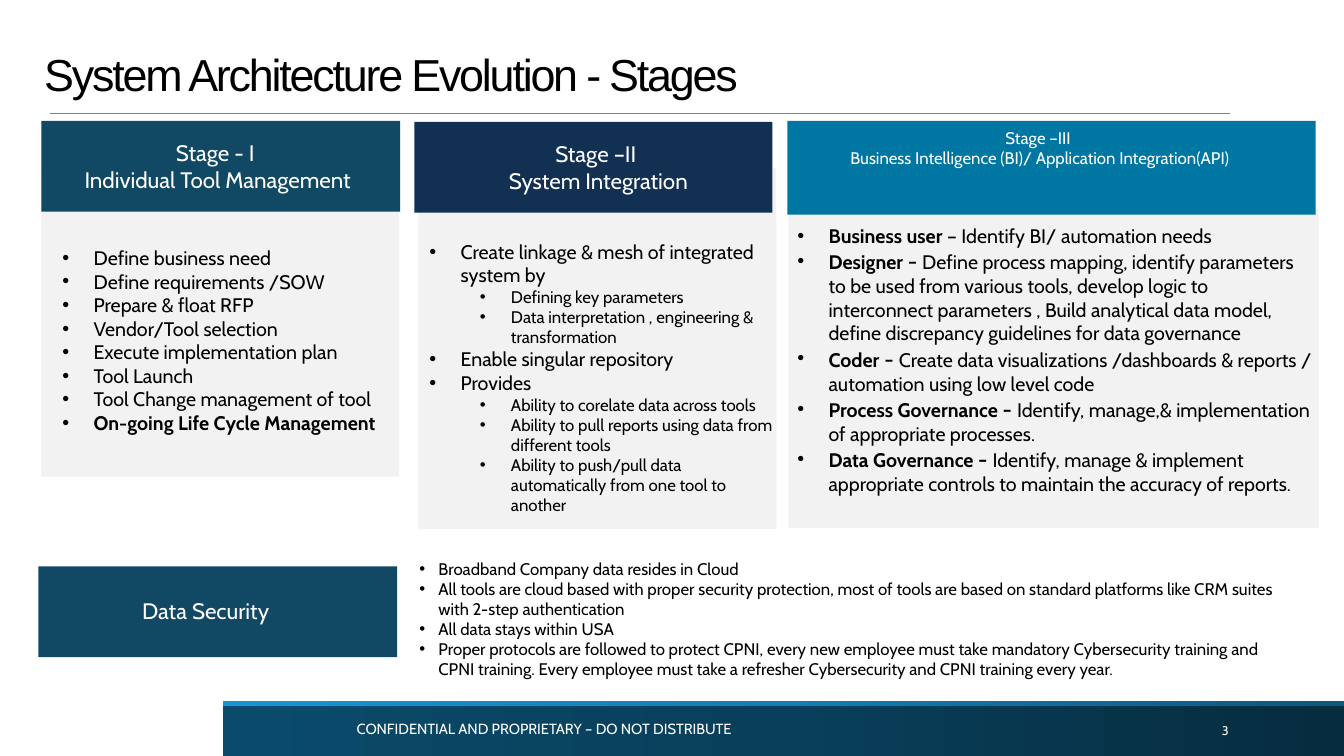
from copy import deepcopy
from dataclasses import dataclass
from typing import NamedTuple

from lxml import etree
from pptx import Presentation
from pptx.dml.color import RGBColor
from pptx.enum.shapes import MSO_CONNECTOR, MSO_SHAPE
from pptx.enum.text import MSO_ANCHOR, MSO_AUTO_SIZE, PP_ALIGN
from pptx.oxml.ns import qn
from pptx.util import Emu, Pt

RECT, LINE = MSO_SHAPE.RECTANGLE, MSO_CONNECTOR.STRAIGHT
TOP, MIDDLE, BOTTOM = MSO_ANCHOR.TOP, MSO_ANCHOR.MIDDLE, MSO_ANCHOR.BOTTOM
LEFT, CENTER = PP_ALIGN.LEFT, PP_ALIGN.CENTER
GROW, FIXED = MSO_AUTO_SIZE.SHAPE_TO_FIT_TEXT, MSO_AUTO_SIZE.NONE
SCALE = 9144  # EMU in one px, 100 px to the inch


@dataclass(frozen=True)
class Theme:
    black: str = "000000"
    white: str = "FFFFFF"
    rule: str = "808080"
    panel: str = "F2F2F2"
    teal: str = "114864"
    navy: str = "113052"
    blue: str = "0076A3"
    band: tuple[str, ...] = ("062C3F", "093F5A", "0A4B6B")
    strip: tuple[str, ...] = ("0C587E", "127EB4", "1595D5")
    head: str = "Arial"
    body: str = "Cabin"
    title: float = 32
    large: float = 16
    main: float = 14
    small: float = 12
    foot: float = 10.5
    page: float = 9


T = Theme()


class Box(NamedTuple):
    x: int
    y: int
    w: int
    h: int


class Run(NamedTuple):
    text: str
    size: float = T.main
    bold: bool = False


class Para(NamedTuple):
    runs: list[Run]
    level: int = 0


class Label(NamedTuple):
    box: Box
    fill: str
    area: Box
    lines: list[str]
    size: float


class Points(NamedTuple):
    area: Box
    paras: list[Para]
    hang: int = 31


def px(n: int) -> Emu:
    return Emu(n * SCALE)


def rect(shapes, box: Box, fill: str | tuple[str, ...]) -> None:
    """Draw a plain block; a tuple of colours runs from right to left."""
    shape = shapes.add_shape(RECT, *map(px, box))
    shape.shadow.inherit = False
    shape.line.fill.background()
    if isinstance(fill, str):
        shape.fill.solid()
        shape.fill.fore_color.rgb = RGBColor.from_string(fill)
        return
    shape.fill.gradient()
    shape.fill.gradient_angle = 180
    stops = shape._element.spPr.find(qn("a:gradFill")).find(qn("a:gsLst"))
    stops.append(deepcopy(stops[0]))
    for i, stop in enumerate(shape.fill.gradient_stops):
        stop.position = i / (len(fill) - 1)
        stop.color.rgb = RGBColor.from_string(fill[i])


def rule(shapes, x: int, y: int, end: int) -> None:
    line = shapes.add_connector(LINE, px(x), px(y), px(end), px(y))
    line.line.width = Pt(0.5)
    line.line.color.rgb = RGBColor.from_string(T.rule)
    etree.SubElement(line._element.spPr, qn("a:effectLst"))


def bullet(para, left: int, hang: int) -> None:
    props = para._p.get_or_add_pPr()
    props.set("marL", str(px(left)))
    props.set("indent", str(px(-hang)))
    etree.SubElement(props, qn("a:buFont")).set("typeface", "Arial")
    etree.SubElement(props, qn("a:buChar")).set("char", "•")


def write(shapes, box: Box, paras: list[Para], *, color: str = T.black,
          font: str = T.body, align=LEFT, anchor=TOP, fit=GROW, hang: int = 0,
          space: float | None = None, track: int = 0) -> None:
    """Add text; hang gives bullets, track is in hundredths of a point."""
    frame = shapes.add_textbox(*map(px, box)).text_frame
    frame.word_wrap = True
    frame.auto_size = fit
    frame.vertical_anchor = anchor
    for i, item in enumerate(paras):
        para = frame.add_paragraph() if i else frame.paragraphs[0]
        para.alignment = align
        para.level = item.level
        if space:
            para.line_spacing = space
        if hang:
            bullet(para, hang + 50 * item.level, hang)
        for part in item.runs:
            run = para.add_run()
            run.text = part.text
            run.font.name = font
            run.font.size = Pt(part.size)
            run.font.bold = part.bold
            run.font.color.rgb = RGBColor.from_string(color)
            if track:
                run._r.get_or_add_rPr().set("spc", str(track))


def plain(*lines: str, size: float = T.main, level: int = 0) -> list[Para]:
    return [Para([Run(line, size)], level) for line in lines]


def role(name: str, *dash: Run, duty: str) -> Para:
    return Para([Run(name, bold=True), *dash, Run(duty)])


PANELS = [Box(782, 208, 526, 316), Box(415, 167, 355, 358),
          Box(41, 172, 355, 301)]

LABELS = [
    Label(Box(41, 120, 356, 90), T.teal, Box(46, 133, 340, 64),
          ["Stage - I ", "Individual Tool Management"], T.large),
    Label(Box(411, 121, 355, 90), T.navy, Box(417, 134, 353, 64),
          ["Stage –II ", "System Integration"], T.large),
    Label(Box(781, 120, 524, 93), T.blue, Box(781, 122, 501, 50),
          ["Stage –III ",
           "Business Intelligence (BI)/ Application Integration(API)"],
          T.small),
    Label(Box(38, 562, 356, 90), T.teal, Box(34, 588, 340, 37),
          ["Data Security"], T.large),
]

DASH = Run("- ", T.large)
BOLD = Run("- ", T.large, True)

POINTS = [
    Points(Box(52, 239, 355, 199), [
        *plain("Define business need", "Define requirements /SOW",
               "Prepare & float RFP", "Vendor/Tool selection",
               "Execute implementation plan", "Tool Launch",
               "Tool Change management of tool"),
        Para([Run("On-going Life Cycle Management", bold=True)]),
    ]),
    Points(Box(416, 233, 365, 316), [
        *plain("Create linkage & mesh of integrated system by"),
        *plain("Defining key parameters",
               "Data interpretation , engineering & transformation",
               size=T.small, level=1),
        *plain("Enable singular repository", "Provides"),
        *plain("Ability to corelate data across tools",
               "Ability to pull reports using data from different tools",
               "Ability to push/pull data automatically from one tool to "
               "another", size=T.small, level=1),
    ]),
    Points(Box(781, 217, 533, 283), [
        role("Business user ", duty="– Identify BI/ automation needs"),
        role("Designer ", DASH, duty="Define process mapping, identify "
             "parameters to be used from various tools, develop logic to "
             "interconnect parameters , Build analytical data model, define "
             "discrepancy guidelines for data governance"),
        role("Coder", Run(" ", T.large, True), DASH,
             duty="Create data visualizations /dashboards & reports / "
             "automation using low level code"),
        role("Process Governance ", BOLD, duty="Identify, manage,& "
             "implementation of appropriate processes."),
        role("Data Governance ", BOLD, duty="Identify, manage & implement "
             "appropriate controls to maintain the accuracy of reports."),
    ]),
    Points(Box(406, 549, 881, 131), plain(
        "Broadband Company data resides in Cloud",
        "All tools are cloud based with proper security protection, most of "
        "tools are based on standard platforms like CRM suites with 2-step "
        "authentication",
        "All data stays within USA",
        "Proper protocols are followed to protect CPNI, every new employee "
        "must take mandatory Cybersecurity training and CPNI training. Every "
        "employee must take a refresher Cybersecurity and CPNI training every "
        "year.", size=T.small), hang=19),
]


def main() -> None:
    deck = Presentation()
    deck.slide_width, deck.slide_height = px(1333), px(750)
    shapes = deck.slides.add_slide(deck.slide_layouts[6]).shapes

    rect(shapes, Box(221, 700, 1112, 50), T.band)
    rule(shapes, 50, 112, 1220)
    rect(shapes, Box(221, 695, 1112, 5), T.strip)
    write(shapes, Box(344, 709, 644, 28),
          plain("CONFIDENTIAL AND PROPRIETARY – DO NOT DISTRIBUTE",
                size=T.foot), color=T.white)
    write(shapes, Box(1202, 705, 85, 40), plain("3", size=T.page),
          color=T.white, anchor=MIDDLE, fit=FIXED)
    write(shapes, Box(34, 24, 1100, 81),
          plain("System Architecture Evolution - Stages", size=T.title),
          font=T.head, anchor=BOTTOM, fit=FIXED, space=0.9, track=-160)

    for panel in PANELS:
        rect(shapes, panel, T.panel)
    for label in LABELS:
        rect(shapes, label.box, label.fill)
        write(shapes, label.area, plain(*label.lines, size=label.size),
              color=T.white, align=CENTER)
    for group in POINTS:
        write(shapes, group.area, group.paras, hang=group.hang)

    deck.save("out.pptx")


if __name__ == "__main__":
    main()
